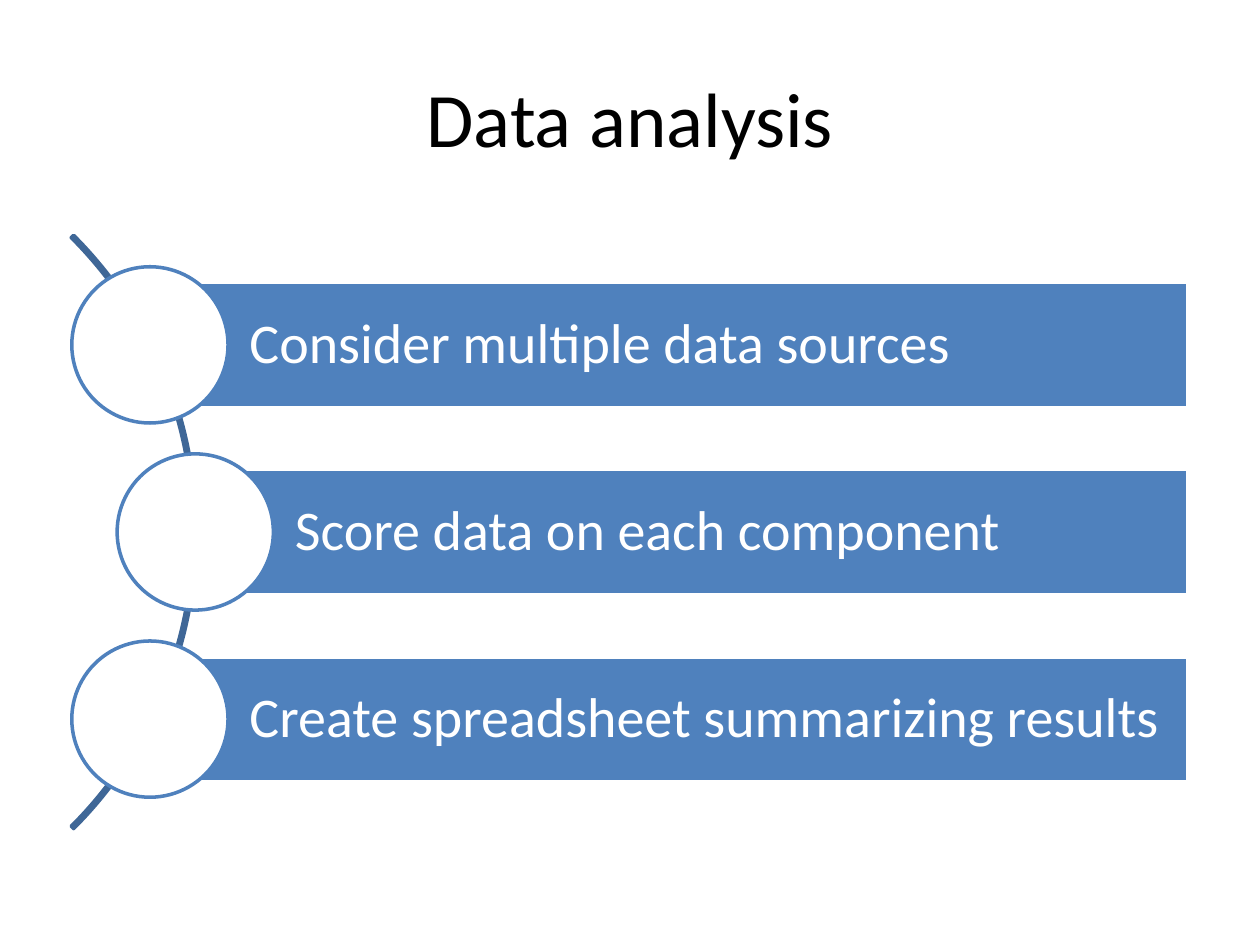
import dataclasses

import pptx
import pptx.dml.color
import pptx.enum.shapes
import pptx.enum.text
import pptx.util

BLACK = pptx.dml.color.RGBColor(0x00, 0x00, 0x00)
WHITE = pptx.dml.color.RGBColor(0xFF, 0xFF, 0xFF)
BLUE = pptx.dml.color.RGBColor(0x4F, 0x81, 0xBD)
DARK_BLUE = pptx.dml.color.RGBColor(0x3F, 0x67, 0x97)

FONT = "Calibri"
SLIDE_WIDTH = pptx.util.Inches(10)
SLIDE_HEIGHT = pptx.util.Inches(7.5)
OUTLINE = pptx.util.Pt(2)

# Horizontal lengths are shares of the slide's width
BAR_RIGHT = 0.943
NODE_SIZE = 0.124
ARC_SIZE = 0.666
ARC_RIGHT = 0.156
# Vertical lengths are shares of the slide's height
MIDDLE = 0.563
ROW_PITCH = 0.198
BAR_HEIGHT = 0.132

Shape = pptx.enum.shapes.MSO_SHAPE


@dataclasses.dataclass(frozen=True)
class Step:
    label: str
    row: int  # rows below the middle one
    node_center: float  # share of the slide's width


STEPS = (
    Step("Consider multiple data sources", -1, 0.119),
    Step("Score data on each component", 0, 0.155),
    Step("Create spreadsheet summarizing results", 1, 0.119),
)


def across(share: float) -> int:
    return round(SLIDE_WIDTH * share)


def down(share: float) -> int:
    return round(SLIDE_HEIGHT * share)


def add_outlined(slide, kind, left: int, center_y: int, width: int, height: int,
                 line_color, fill_color=None):
    """Add a flat shape centred vertically on center_y; no fill by default."""
    shape = slide.shapes.add_shape(kind, left, center_y - height // 2, width, height)
    shape.shadow.inherit = False
    if fill_color is None:
        shape.fill.background()
    else:
        shape.fill.solid()
        shape.fill.fore_color.rgb = fill_color
    shape.line.color.rgb = line_color
    shape.line.width = OUTLINE
    return shape


def add_label(frame, label: str, size: float, color, alignment):
    """Write a single run in the frame's first paragraph."""
    frame.word_wrap = True
    frame.vertical_anchor = pptx.enum.text.MSO_ANCHOR.MIDDLE
    paragraph = frame.paragraphs[0]
    paragraph.alignment = alignment
    run = paragraph.add_run()
    run.text = label
    run.font.name = FONT
    run.font.size = pptx.util.Pt(size)
    run.font.color.rgb = color
    return paragraph


def add_title(slide, label: str) -> None:
    title = slide.shapes.title
    title.left, title.top = across(0.05), down(0.04)
    title.width, title.height = across(0.9), pptx.util.Inches(1.25)
    add_label(title.text_frame, label, 44, BLACK, pptx.enum.text.PP_ALIGN.CENTER)


def add_arc(slide) -> None:
    size = across(ARC_SIZE)
    arc = add_outlined(slide, Shape.BLOCK_ARC, across(ARC_RIGHT) - size,
                       down(MIDDLE), size, size, DARK_BLUE)
    # Start and end angles of 315 and 45 degrees, then a hairline thickness
    for index, value in enumerate((189, 27, 0.004)):
        arc.adjustments[index] = value


def add_step(slide, step: Step) -> None:
    center_y = down(MIDDLE + step.row * ROW_PITCH)
    bar = add_outlined(slide, Shape.RECTANGLE, across(step.node_center), center_y,
                       across(BAR_RIGHT - step.node_center), down(BAR_HEIGHT),
                       WHITE, BLUE)
    frame = bar.text_frame
    frame.margin_left = pptx.util.Inches(0.79)
    frame.margin_top = frame.margin_right = frame.margin_bottom = pptx.util.Inches(0.09)
    paragraph = add_label(frame, step.label, 32, WHITE, pptx.enum.text.PP_ALIGN.LEFT)
    paragraph.line_spacing = 0.9

    size = across(NODE_SIZE)
    add_outlined(slide, Shape.OVAL, across(step.node_center) - size // 2, center_y,
                 size, size, BLUE, WHITE)


def main() -> None:
    presentation = pptx.Presentation()
    presentation.slide_width = SLIDE_WIDTH
    presentation.slide_height = SLIDE_HEIGHT
    title_only = presentation.slide_layouts[5]
    slide = presentation.slides.add_slide(title_only)

    add_title(slide, "Data analysis")
    add_arc(slide)
    for step in STEPS:
        add_step(slide, step)

    presentation.save("out.pptx")


if __name__ == "__main__":
    main()
